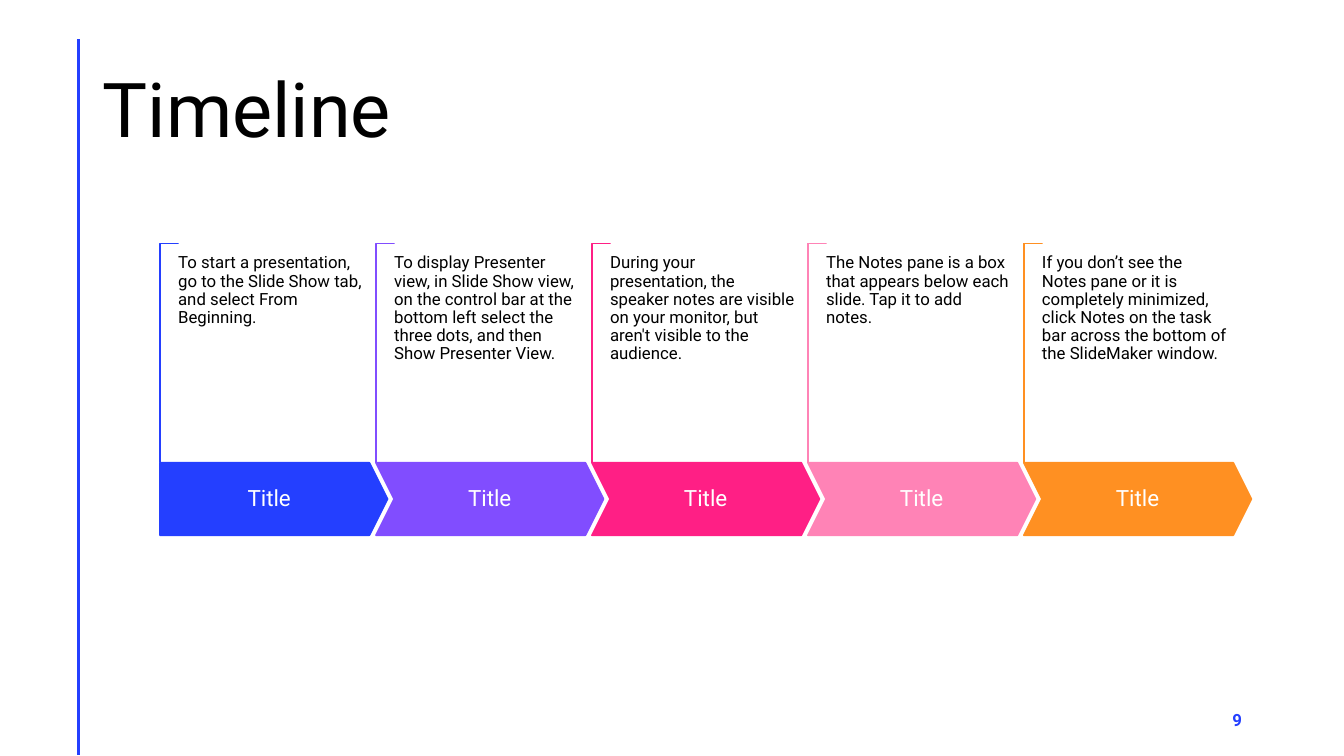
from pptx import Presentation
from pptx.dml.color import RGBColor
from pptx.enum.shapes import MSO_CONNECTOR, MSO_SHAPE
from pptx.enum.text import MSO_ANCHOR, PP_ALIGN
from pptx.oxml.ns import qn
from pptx.util import Cm, Pt

BLUE = "243FFF"
STEPS = [
    (BLUE, "To start a presentation, go to the Slide Show tab, and select From Beginning."),
    ("814DFF", "To display Presenter view, in Slide Show view, on the control bar at the "
               "bottom left select the three dots, and then Show Presenter View."),
    ("FF1F85", "During your presentation, the speaker notes are visible on your monitor, "
               "but aren't visible to the audience."),
    ("FF83B6", "The Notes pane is a box that appears below each slide. Tap it to add notes."),
    ("FF9022", "If you don’t see the Notes pane or it is completely minimized, click Notes "
               "on the task bar across the bottom of the SlideMaker window."),
]


def color(code):
    return RGBColor.from_string(code)


def write(shape, text, size, code, align=PP_ALIGN.LEFT, anchor=MSO_ANCHOR.MIDDLE,
          inset=(0.25, 0.13), bold=False):
    frame = shape.text_frame
    frame.word_wrap = True
    frame.vertical_anchor = anchor
    frame.margin_left = frame.margin_right = Cm(inset[0])
    frame.margin_top = frame.margin_bottom = Cm(inset[1])
    frame.text = text
    para = frame.paragraphs[0]
    para.alignment = align
    para.line_spacing = 0.9
    font = para.runs[0].font
    font.name, font.size, font.bold = "Roboto", Pt(size), bold
    font.color.rgb = color(code)


def add_text(slide, box, *args, **style):
    write(slide.shapes.add_textbox(*map(Cm, box)), *args, **style)


def add_form(slide, kind, box, fill, edge, *adjust):
    form = slide.shapes.add_shape(kind, *map(Cm, box))
    form.shadow.inherit = False
    form.fill.solid()
    form.fill.fore_color.rgb = color(fill)
    form.line.color.rgb = color(edge)
    form.line.width = Pt(1)
    for i, value in enumerate(adjust):
        form.adjustments[i] = value
    return form


def add_frame(slide, left, top, width, height):
    """Side rule, heading and page number."""
    rule = slide.shapes.add_connector(
        MSO_CONNECTOR.STRAIGHT, Cm(left), Cm(top), Cm(left), Cm(top + height))
    rule.line.color.rgb = color(BLUE)
    rule.line.width = Pt(2)
    props = rule._element.spPr
    props.append(props.makeelement(qn("a:effectLst"), {}))
    add_text(slide, (left + 0.36, top + 0.02, width - 0.36, 3.68), "Timeline", 54, "000000")
    add_text(slide, (left + width - 7.62, top + 16.66, 7.62, 1.02), "9", 12, BLUE,
             align=PP_ALIGN.RIGHT, bold=True)


def add_step(slide, box, kind, code, note):
    """Bracket with a note, standing on an arrow block."""
    left, top, width, height = box
    block, rim = 1.83, 0.46
    stem = height - block
    # The corner is turned a quarter, so its box is centred on the upright bracket.
    corner = (left + (rim - stem) / 2, top + (stem - rim) / 2, stem, rim)
    bracket = add_form(slide, MSO_SHAPE.CORNER, corner, "FFFFFF", code, 0.01, 0.01)
    bracket.rotation = 90
    arrow = add_form(slide, kind, (left, top + stem, width, block), code, code, 0.25)
    write(arrow, "Title", 16, "FFFFFF", align=PP_ALIGN.CENTER, inset=(0.28, 0.28))
    add_text(slide, (left + rim, top + 0.27, 4.65, 4.98), note, 12, "000000",
             anchor=MSO_ANCHOR.TOP, inset=(0, 0))


def add_steps(slide, left, top, width, height):
    span = 5.74
    pitch = (width - span) / (len(STEPS) - 1)
    for i, (code, note) in enumerate(STEPS):
        kind = MSO_SHAPE.CHEVRON if i else MSO_SHAPE.PENTAGON
        add_step(slide, (left + i * pitch, top, span, height), kind, code, note)


def main():
    deck = Presentation()
    deck.slide_width, deck.slide_height = Cm(33.87), Cm(19.05)
    slide = deck.slides.add_slide(deck.slide_layouts[6])
    add_frame(slide, 1.98, 0.99, 29.57, 18.03)
    add_steps(slide, 4.03, 6.14, 27.51, 7.35)
    deck.save("out.pptx")


if __name__ == "__main__":
    main()
